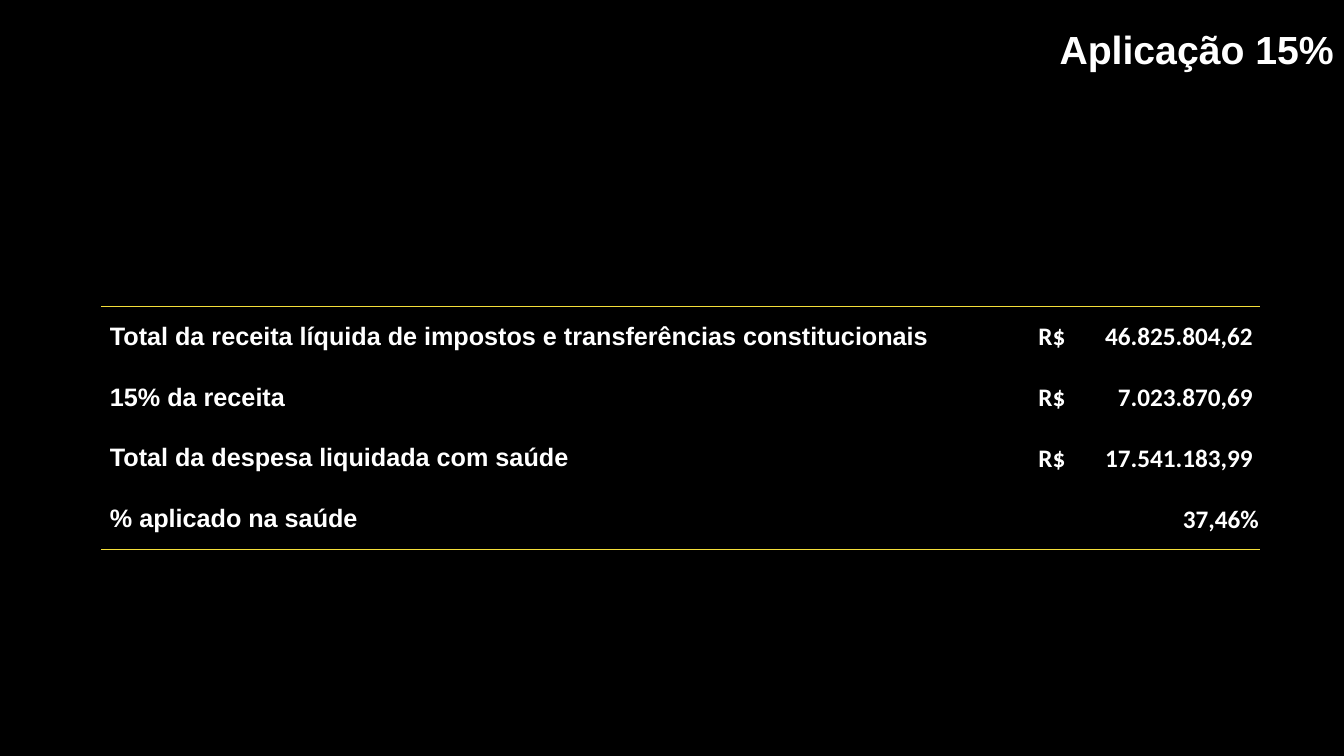
from lxml import etree
from pptx import Presentation
from pptx import util as u
from pptx.dml.color import RGBColor
from pptx.enum import text
from pptx.oxml.ns import qn

WHITE, BLACK, YELLOW = "FFFFFF", "000000", "F4DE3A"
PLAIN_STYLE = "{2D5ABB26-0587-4C30-8999-92F81FD0307C}"
ROWS = [
    ("Total da receita líquida de impostos e transferências constitucionais",
     "46.825.804,62"),
    ("15% da receita", "7.023.870,69"),
    ("Total da despesa liquidada com saúde", "17.541.183,99"),
    ("% aplicado na saúde", "37,46%"),
]


def rgb(color):
    return RGBColor.from_string(color)


def add_run(p, content, size, font):
    r = p.add_run()
    r.text = content
    r.font.size = u.Pt(size)
    r.font.name = font
    r.font.bold = True
    r.font.color.rgb = rgb(WHITE)


def set_borders(cell, colors):
    """Draw the sides named in colors (T, B, L, R) and clear the others."""
    tcPr = cell._tc.get_or_add_tcPr()
    for side in "LRTB":
        ln = etree.SubElement(tcPr, qn(f"a:ln{side}"), w=str(u.Pt(1)))
        if side in colors:
            fill = etree.SubElement(ln, qn("a:solidFill"))
            etree.SubElement(fill, qn("a:srgbClr"), val=colors[side])
        else:
            etree.SubElement(ln, qn("a:noFill"))


def add_tabs(p, *stops):
    tabs = etree.SubElement(p._p.get_or_add_pPr(), qn("a:tabLst"))
    for position, align in stops:
        etree.SubElement(tabs, qn("a:tab"), pos=str(position), algn=align)


def fill_label(cell, label):
    p = cell.text_frame.paragraphs[0]
    p._p.get_or_add_pPr().set("marL", str(u.Cm(0.23)))
    add_run(p, label, 18, "Arial")


def fill_value(cell, value):
    """Line up amounts in R$ on tab stops; set a percentage flush right."""
    cell.margin_left = cell.margin_right = cell.margin_top = u.Cm(0.03)
    p = cell.text_frame.paragraphs[0]
    if value.endswith("%"):
        p.alignment = text.PP_ALIGN.RIGHT
    else:
        add_tabs(p, (u.Cm(1.78), "l"), (u.Cm(7.18), "r"))
        value = f"\tR$\t{value}"
    add_run(p, value, 18, "Calibri")


def add_summary_table(s):
    tbl = s.shapes.add_table(len(ROWS), 2, u.Cm(2.54), u.Cm(7.72),
                             u.Cm(29.21), u.Cm(6.12)).table
    tbl.first_row = tbl.horz_banding = False
    tbl._tbl.tblPr.find(qn("a:tableStyleId")).text = PLAIN_STYLE
    tbl.columns[0].width, tbl.columns[1].width = u.Cm(21.82), u.Cm(7.39)
    for i, row in enumerate(ROWS):
        borders = {}
        if i == 0:
            borders["T"] = YELLOW
        if i == len(ROWS) - 1:
            borders["B"] = YELLOW
        tbl.rows[i].height = u.Cm(1.53)
        for j, (fill_cell, content) in enumerate(zip((fill_label, fill_value), row)):
            cell = tbl.cell(i, j)
            cell.margin_left = cell.margin_right = 0
            cell.margin_top = cell.margin_bottom = 0
            cell.vertical_anchor = text.MSO_ANCHOR.MIDDLE
            set_borders(cell, borders)
            cell.fill.background()
            fill_cell(cell, content)


def add_title(s, title):
    sp = s.shapes.add_textbox(u.Cm(7.09), u.Cm(0.51), u.Cm(26.77), u.Cm(1.45))
    tf = sp.text_frame
    tf.word_wrap = True
    tf.auto_size = text.MSO_AUTO_SIZE.SHAPE_TO_FIT_TEXT
    p = tf.paragraphs[0]
    p.alignment = text.PP_ALIGN.RIGHT
    add_run(p, title, 28, "Arial")


def main():
    prs = Presentation()
    prs.slide_width, prs.slide_height = u.Cm(33.87), u.Cm(19.05)
    s = prs.slides.add_slide(prs.slide_layouts[6])
    s.background.fill.solid()
    s.background.fill.fore_color.rgb = rgb(BLACK)
    add_summary_table(s)
    add_title(s, "Aplicação 15%")
    prs.save("out.pptx")


if __name__ == "__main__":
    main()
